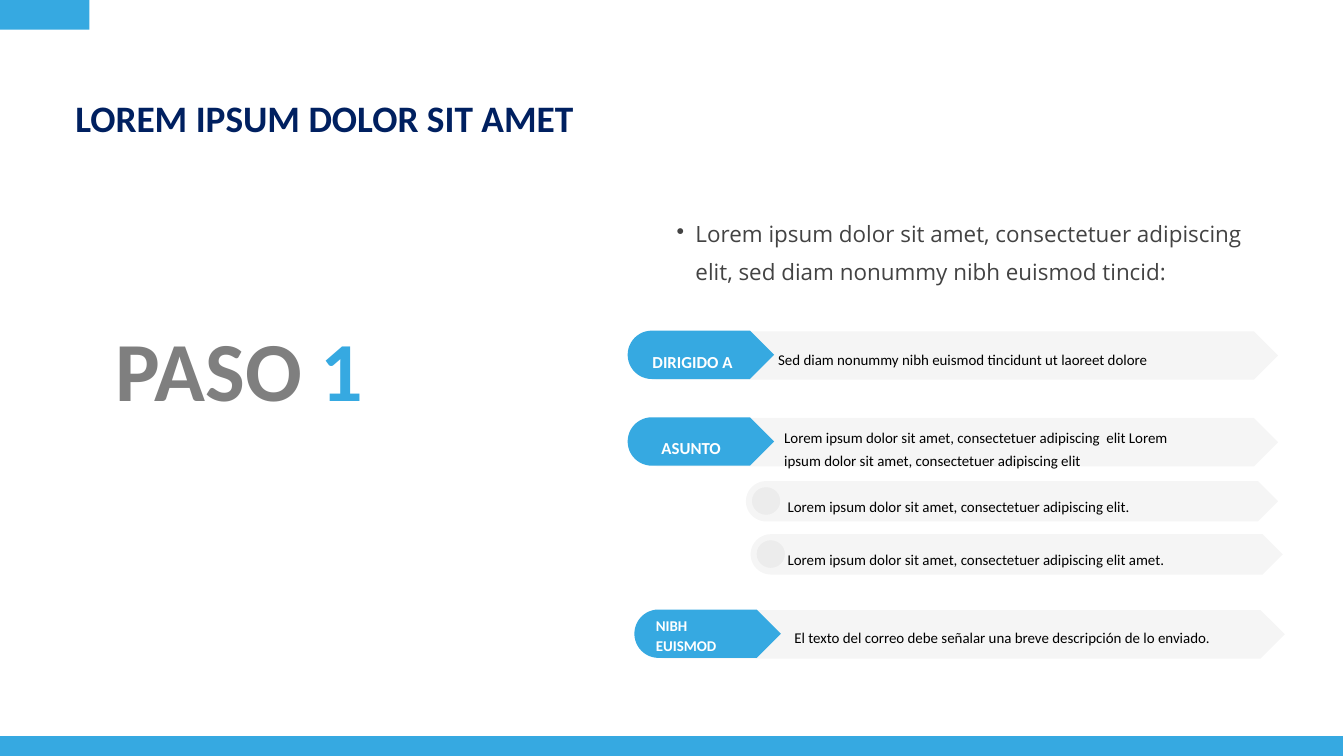
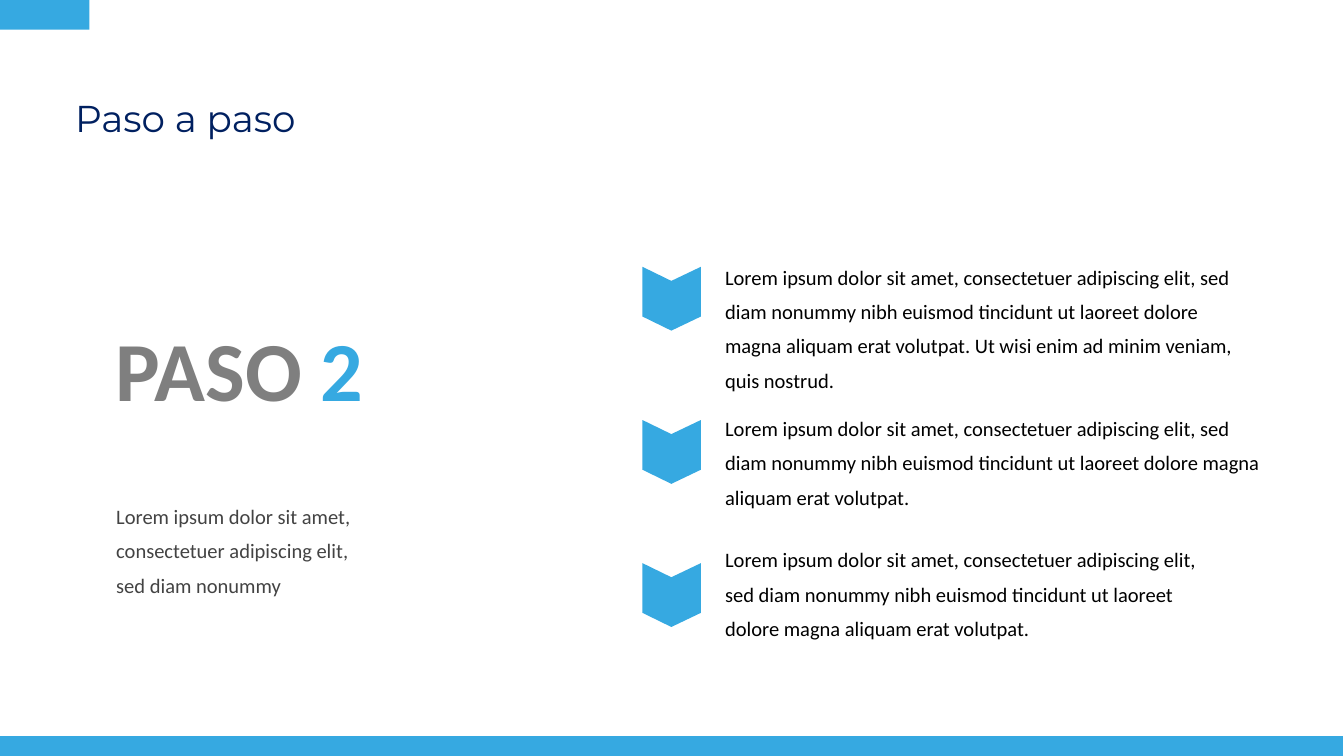
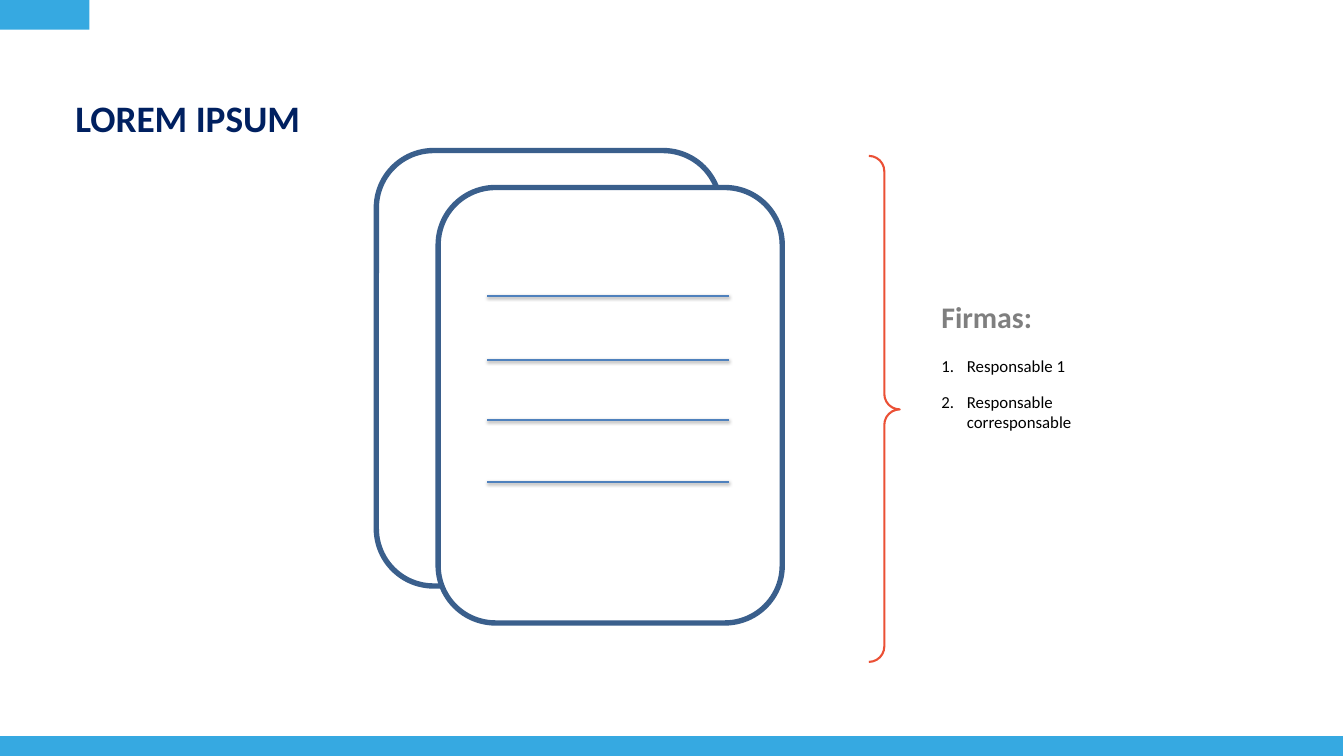
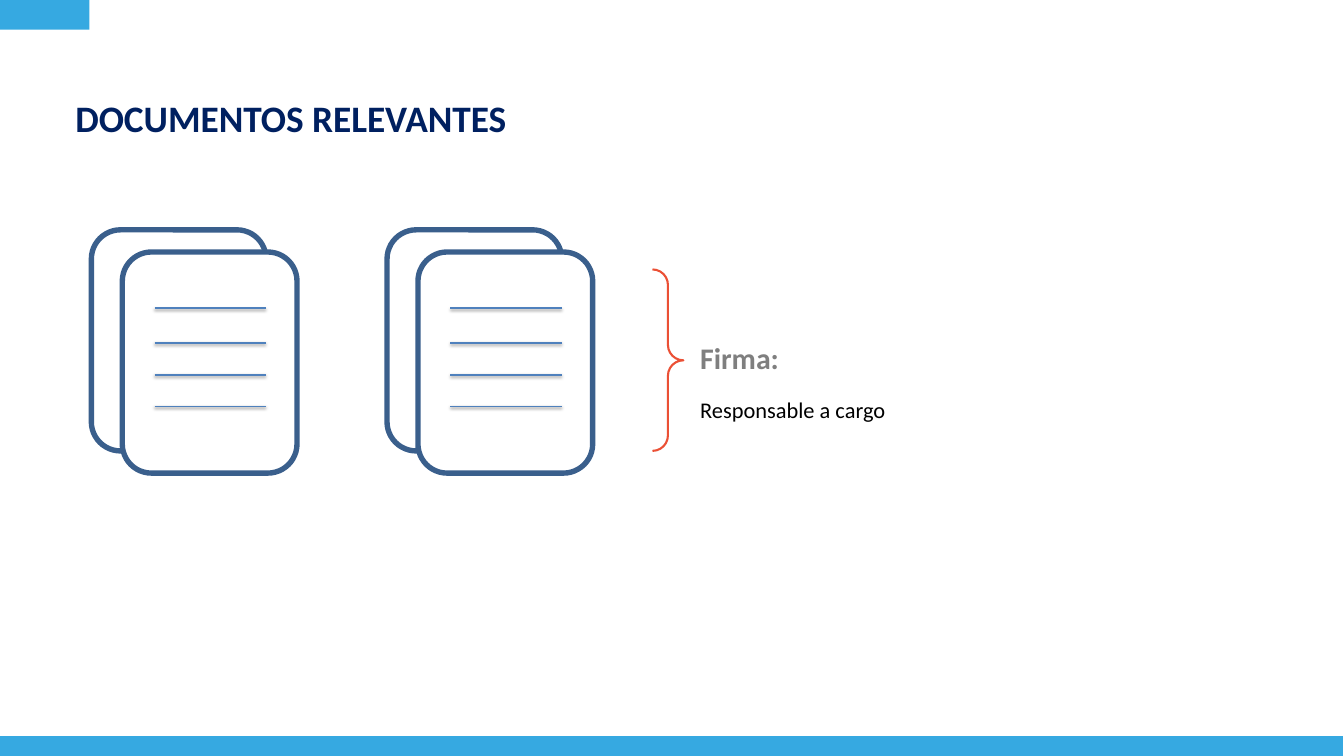
"""Four training slides: two numbered steps and two signature pages."""
import math
from dataclasses import dataclass
from typing import NamedTuple, Optional

from lxml import etree
from pptx import Presentation
from pptx import util as u
from pptx.dml.color import RGBColor
from pptx.enum import shapes, text
from pptx.oxml import ns

# Scale: 100 px to the inch
PX = 9144

# Colours
SKY = RGBColor(0x36, 0xA9, 0xE1)
NAVY = RGBColor(0x00, 0x20, 0x60)
GREY = RGBColor(0x7F, 0x7F, 0x7F)
CHARCOAL = RGBColor(0x43, 0x43, 0x43)
INK = RGBColor(0x19, 0x19, 0x19)
BLACK = RGBColor(0, 0, 0)
WHITE = RGBColor(0xFF, 0xFF, 0xFF)
PAGE_EDGE = RGBColor(0x3A, 0x5F, 0x8C)
PAGE_RULE = RGBColor(0x4F, 0x81, 0xBD)
BRACE_RED = RGBColor(0xEB, 0x50, 0x35)

LOREM = "Lorem ipsum dolor sit amet, consectetuer adipiscing elit"
LOREM_LONG = (f"{LOREM}, sed diam nonummy nibh euismod tincidunt ut laoreet "
              "dolore magna aliquam erat volutpat.")


class Box(NamedTuple):
    left: int
    top: int
    width: int
    height: int


class Run(NamedTuple):
    words: str
    size: int
    colour: RGBColor = BLACK
    bold: bool = False
    font: str = "Calibri"


class Bullet(NamedTuple):
    tag: str
    attribute: str
    value: str
    colour: RGBColor
    margin: int
    hanging: int


@dataclass
class Para:
    runs: list[Run]
    spacing: Optional[float] = None
    centred: bool = False
    level: int = 0
    before: int = 0
    bullet: Optional[Bullet] = None


class Flag(NamedTuple):
    box: Box
    dot: Box
    colour: RGBColor
    alpha: Optional[int] = None


class Label(NamedTuple):
    box: Box
    words: str
    size: int
    spacing: float
    colour: RGBColor = BLACK
    bold: bool = False
    centred: bool = False


class Sheets(NamedTuple):
    """A pair of overlapping pages; rules are measured from the back page."""
    back: Box
    shift: tuple[int, int]
    rule_left: int
    rule_width: int
    rule_tops: tuple[int, ...]


DOT = Bullet("a:buChar", "char", "•", CHARCOAL, 57, -28)
NUMBER = Bullet("a:buAutoNum", "type", "arabicPeriod", BLACK, 38, -38)


# Drawing helpers
def emu(lengths) -> list[int]:
    return [round(length * PX) for length in lengths]


def add_xml(parent, tag: str, **attributes):
    child = etree.SubElement(parent, ns.qn(tag))
    for key, value in attributes.items():
        child.set(key, str(value))
    return child


def paint(shape, colour: RGBColor, alpha: Optional[int] = None) -> None:
    shape.shadow.inherit = False
    shape.fill.solid()
    shape.fill.fore_color.rgb = colour
    shape.line.fill.background()
    if alpha is not None:
        tint = shape._element.spPr.find(".//" + ns.qn("a:srgbClr"))
        add_xml(tint, "a:alpha", val=alpha * 1000)


def add_outline(parent, points, colour: RGBColor, alpha: Optional[int] = None):
    corners = [emu(point) for point in points]
    builder = parent.shapes.build_freeform(*corners[0])
    builder.add_line_segments(corners[1:], close=True)
    outline = builder.convert_to_shape()
    paint(outline, colour, alpha)
    return outline


def set_bullet(paragraph, bullet: Bullet) -> None:
    props = paragraph._p.get_or_add_pPr()
    props.set("marL", str(bullet.margin * PX))
    props.set("indent", str(bullet.hanging * PX))
    add_xml(add_xml(props, "a:buClr"), "a:srgbClr", val=bullet.colour)
    add_xml(props, bullet.tag, **{bullet.attribute: bullet.value})


def add_text(slide, box: Box, paras: list[Para], insets=(0, 0)) -> None:
    frame = slide.shapes.add_textbox(*emu(box)).text_frame
    frame.word_wrap = True
    frame.auto_size = text.MSO_AUTO_SIZE.SHAPE_TO_FIT_TEXT
    frame.margin_left = frame.margin_right = insets[0] * PX
    frame.margin_top = frame.margin_bottom = insets[1] * PX
    for index, para in enumerate(paras):
        paragraph = frame.add_paragraph() if index else frame.paragraphs[0]
        if para.bullet:
            set_bullet(paragraph, para.bullet)
        paragraph.level = para.level
        paragraph.alignment = (text.PP_ALIGN.CENTER if para.centred
                               else text.PP_ALIGN.LEFT)
        if para.spacing:
            paragraph.line_spacing = para.spacing
        if para.before:
            paragraph.space_before = u.Pt(para.before)
        for part in para.runs:
            run = paragraph.add_run()
            run.text = part.words
            run.font.name = part.font
            run.font.size = u.Pt(part.size)
            run.font.bold = part.bold
            run.font.color.rgb = part.colour


def add_label(slide, label: Label) -> None:
    run = Run(label.words, label.size, label.colour, label.bold)
    add_text(slide, label.box, [Para([run], label.spacing, label.centred)])


# Shared slide furniture
def new_slide(deck, title: str, bold: bool = True, font: str = "Calibri",
              title_box: Box = Box(112, 128, 1021, 67)):
    slide = deck.slides.add_slide(deck.slide_layouts[6])
    add_text(slide, title_box,
             [Para([Run(title, 40, NAVY, bold, font)], 1.21)])
    add_outline(slide, [(0, 1095), (1999, 1095), (1999, 1125), (0, 1125)], SKY)
    corner = slide.shapes.add_shape(shapes.MSO_SHAPE.RECTANGLE,
                                    *emu((0, 0, 133, 44)))
    paint(corner, SKY)
    return slide


def add_step_number(slide, number: int) -> None:
    add_text(slide, Box(133, 413, 447, 212),
             [Para([Run("PASO ", 90, GREY, True),
                    Run(str(number), 90, SKY, True)], 1.4, True)])


def add_flag(slide, flag: Flag) -> None:
    """Band with a round left end, a pointed right end and a dot."""
    left, top, width, height = flag.box
    radius = height / 2
    neck, middle = left + width - radius, top + radius
    arc = [(left + radius - radius * math.sin(math.pi * step / 24),
            middle - radius * math.cos(math.pi * step / 24))
           for step in range(25)]
    group = slide.shapes.add_group_shape()
    add_outline(group, [(neck, top), *arc, (neck, top + height),
                        (left + width, middle)], flag.colour, flag.alpha)
    dot = group.shapes.add_shape(shapes.MSO_SHAPE.OVAL, *emu(flag.dot))
    paint(dot, flag.colour, flag.alpha)


def add_chevron(slide, left: int, top: int) -> None:
    corners = [(0, 0), (74, 0), (95, 44), (74, 87), (0, 87), (21, 44)]
    chevron = add_outline(slide, [(left + x, top + y) for x, y in corners], SKY)
    chevron.rotation = 90


def add_page(slide, box: Box, filled: bool) -> None:
    page = slide.shapes.add_shape(shapes.MSO_SHAPE.ROUNDED_RECTANGLE, *emu(box))
    paint(page, WHITE)
    if not filled:
        page.fill.background()
    page.line.color.rgb = PAGE_EDGE
    page.line.width = u.Pt(5.75)


def add_rule(slide, left: int, top: int, width: int) -> None:
    rule = slide.shapes.add_connector(shapes.MSO_CONNECTOR.STRAIGHT,
                                      *emu((left, top, left + width, top)))
    rule.line.color.rgb = PAGE_RULE
    rule.line.width = u.Pt(0)
    effects = add_xml(rule._element.spPr, "a:effectLst")
    shadow = add_xml(effects, "a:outerShdw", blurRad=40000, dist=20000,
                     dir=5400000, rotWithShape=0)
    add_xml(add_xml(shadow, "a:srgbClr", val=BLACK), "a:alpha", val=38000)


def add_sheets(slide, sheets: Sheets) -> None:
    back, (right, down) = sheets.back, sheets.shift
    add_page(slide, back, filled=False)
    add_page(slide, back._replace(left=back.left + right, top=back.top + down),
             filled=True)
    for top in sheets.rule_tops:
        add_rule(slide, back.left + sheets.rule_left, back.top + top,
                 sheets.rule_width)


def add_brace(slide, box: Box) -> None:
    brace = slide.shapes.add_shape(shapes.MSO_SHAPE.RIGHT_BRACE, *emu(box))
    brace.shadow.inherit = False
    brace.fill.background()
    brace.line.color.rgb = BRACE_RED
    brace.line.width = u.Pt(2.25)
    brace.adjustments[0] = 0.5
    brace.adjustments[1] = 0.501


# Slides
def build_step_one(deck) -> None:
    slide = new_slide(deck, "LOREM IPSUM DOLOR SIT AMET")
    intro = f"{LOREM}, sed diam nonummy nibh euismod tincid:"
    add_text(slide, Box(978, 312, 894, 153),
             [Para([Run(intro, 24, CHARCOAL, font="Open Sans")], 1.4, level=1,
                   bullet=DOT)])
    add_step_number(slide, 1)

    for left, top in ((934, 492), (934, 621), (944, 907)):
        add_flag(slide, Flag(Box(left + 10, top + 1, 958, 72),
                             Box(left + 20, top + 12, 50, 49), INK, 4))
        add_flag(slide, Flag(Box(left, top, 218, 72),
                             Box(left + 11, top + 12, 50, 49), SKY))
    for left, top in ((1110, 716), (1117, 795)):
        add_flag(slide, Flag(Box(left, top, 792, 60),
                             Box(left + 9, top + 9, 42, 41), INK, 4))

    labels = [
        Label(Box(1158, 513, 713, 28),
              "Sed diam nonummy nibh euismod tincidunt ut laoreet dolore", 16, 1.31),
        Label(Box(1167, 629, 629, 57),
              "Lorem ipsum dolor sit amet, consectetuer adipiscing  elit " + LOREM,
              16, 1.31),
        Label(Box(1172, 732, 787, 28), f"{LOREM}.", 16, 1.31),
        Label(Box(1172, 811, 787, 28), f"{LOREM} amet.", 16, 1.31),
        Label(Box(1182, 927, 792, 28),
              "El texto del correo debe señalar una breve descripción de lo enviado.",
              16, 1.31),
        Label(Box(957, 511, 147, 33), "DIRIGIDO A", 18, 1.4, WHITE, True, True),
        Label(Box(976, 640, 105, 33), "ASUNTO", 18, 1.4, WHITE, True, True),
        Label(Box(976, 915, 118, 50), "NIBH EUISMOD", 16, 1.11, WHITE, True),
    ]
    for label in labels:
        add_label(slide, label)


def build_step_two(deck) -> None:
    slide = new_slide(deck, "Paso a paso", False, "Montserrat",
                      Box(112, 128, 1654, 67))
    add_step_number(slide, 2)
    add_label(slide, Label(Box(173, 735, 350, 141),
                           f"{LOREM}, sed diam nonummy", 22, 1.4, CHARCOAL))
    steps = [
        (401, Box(1079, 379, 773, 193),
         f"{LOREM_LONG} Ut wisi enim ad minim veniam, quis nostrud."),
        (629, Box(1079, 604, 808, 141), LOREM_LONG),
        (842, Box(1079, 800, 739, 141), LOREM_LONG),
    ]
    for chevron_top, box, words in steps:
        add_chevron(slide, 952, chevron_top)
        add_label(slide, Label(box, words, 22, 1.4))


def build_signatures(deck) -> None:
    slide = new_slide(deck, "LOREM IPSUM")
    add_text(slide, Box(1391, 440, 219, 209), [
        Para([Run("Firmas:", 32, GREY, True)]),
        Para([Run("Responsable 1", 18)], before=22, bullet=NUMBER),
        Para([Run("Responsable corresponsable", 18)], before=17, bullet=NUMBER),
    ], (10, 5))
    add_brace(slide, Box(1293, 232, 46, 753))
    add_sheets(slide, Sheets(Box(560, 224, 512, 648), (92, 55), 165, 360,
                             (216, 312, 401, 493)))


def build_documents(deck) -> None:
    slide = new_slide(deck, "DOCUMENTOS RELEVANTES",
                      title_box=Box(112, 128, 1021, 81))
    add_text(slide, Box(1032, 500, 308, 135), [
        Para([Run("Firma:", 32, GREY, True)]),
        Para([Run("Responsable a cargo", 24)], before=22),
    ], (10, 5))
    add_brace(slide, Box(971, 401, 46, 270))
    for left in (576, 136):
        add_sheets(slide, Sheets(Box(left, 342, 260, 329), (46, 33), 94, 166,
                                 (117, 169, 216, 263)))


def main() -> None:
    deck = Presentation()
    deck.slide_width, deck.slide_height = emu((2000, 1125))
    build_step_one(deck)
    build_step_two(deck)
    build_signatures(deck)
    build_documents(deck)
    deck.save("out.pptx")


if __name__ == "__main__":
    main()
